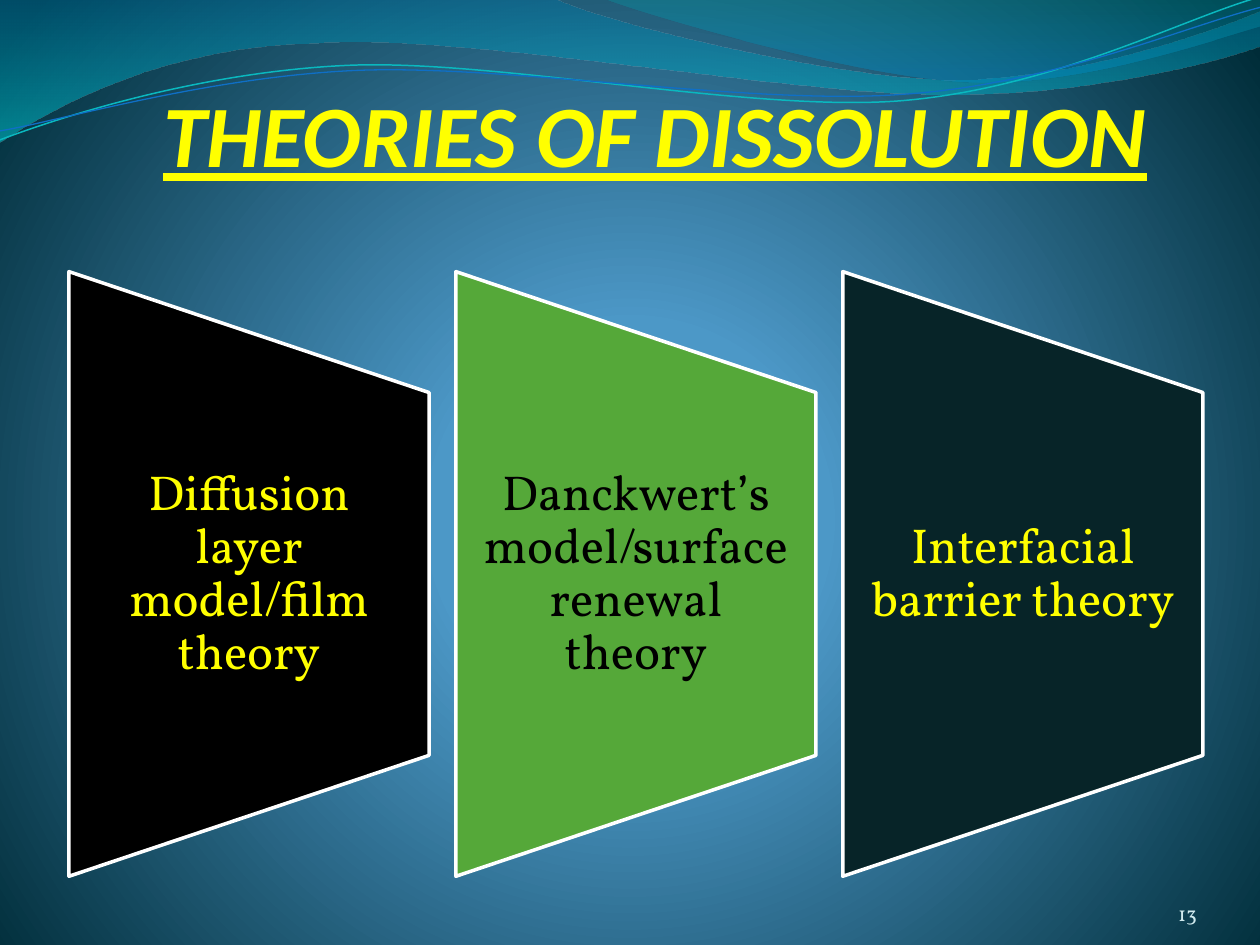
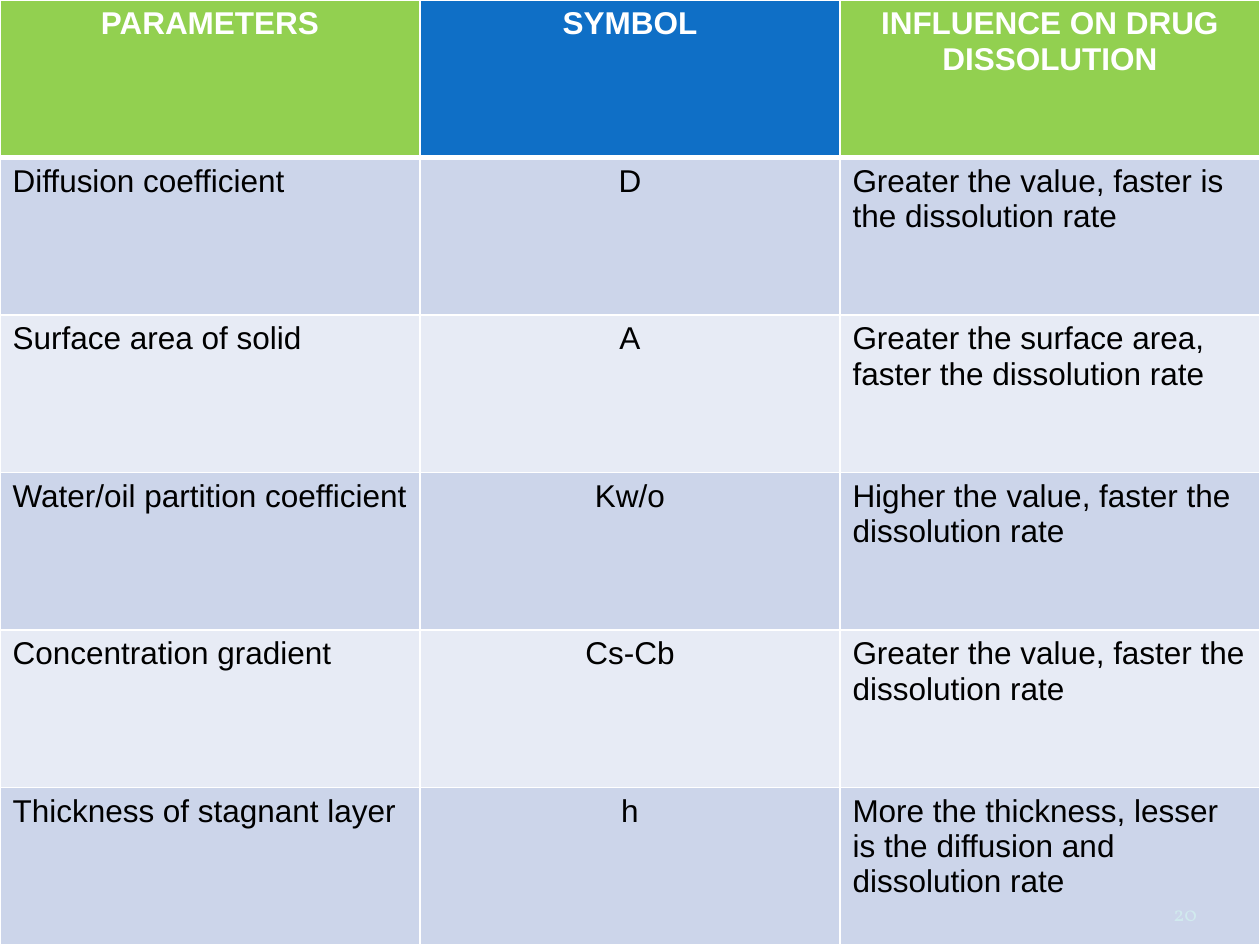
import pptx
import pptx.dml.color
import pptx.enum.shapes
import pptx.enum.text
import pptx.oxml
import pptx.oxml.ns
import pptx.util

Cm, Pt = pptx.util.Cm, pptx.util.Pt
RGBColor = pptx.dml.color.RGBColor
PP_ALIGN = pptx.enum.text.PP_ALIGN
MSO_ANCHOR = pptx.enum.text.MSO_ANCHOR

# Colours
YELLOW = RGBColor(0xFF, 0xFF, 0x00)
BLACK = RGBColor(0x00, 0x00, 0x00)
WHITE = RGBColor(0xFF, 0xFF, 0xFF)
GREEN = RGBColor(0x55, 0xA8, 0x39)
DARK_TEAL = RGBColor(0x07, 0x24, 0x28)
PALE_BLUE = RGBColor(0xD1, 0xEA, 0xEE)
LIME = RGBColor(0x92, 0xD0, 0x50)
BLUE = RGBColor(0x0F, 0x6F, 0xC6)
TURQUOISE = RGBColor(0x0A, 0xB8, 0xBF)
ROW_BANDS = (RGBColor(0xCC, 0xD5, 0xEA), RGBColor(0xE7, 0xEB, 0xF5))
SKY = RGBColor(0x4A, 0xA0, 0xD6)
MID_BLUE = RGBColor(0x4C, 0x98, 0xC7)
DEEP_TEAL = RGBColor(0x00, 0x2C, 0x38)
WAVE_BLUE = RGBColor(0x00, 0x74, 0xA1)
WAVE_CYAN = RGBColor(0x00, 0xC6, 0xCF)
WAVE_TEAL = RGBColor(0x00, 0xA1, 0xA9)
WAVE_AZURE = RGBColor(0x00, 0x8B, 0xBF)

# Content
TITLE = "THEORIES OF DISSOLUTION"
THEORIES = [
    ("Diffusion layer model/film theory", BLACK, YELLOW),
    ("Danckwert’s model/surface renewal theory", GREEN, BLACK),
    ("Interfacial barrier theory", DARK_TEAL, YELLOW),
]
HEADERS = [("PARAMETERS", LIME), ("SYMBOL", BLUE),
           ("INFLUENCE ON DRUG DISSOLUTION", LIME)]
PARAMETERS = [
    ("Diffusion coefficient", "D", "Greater the value, faster is the dissolution rate"),
    ("Surface area of solid", "A", "Greater the surface area, faster the dissolution rate"),
    ("Water/oil partition coefficient", "Kw/o", "Higher the value, faster the dissolution rate"),
    ("Concentration gradient", "Cs-Cb", "Greater the value, faster the dissolution rate"),
    ("Thickness of stagnant layer", "h",
     "More the thickness, lesser is the diffusion and dissolution rate"),
]

# Sizes and formats
SLIDE_WIDTH, SLIDE_HEIGHT = Cm(25.4), Cm(19.05)
TITLE_FORMAT = {"name": "Calibri", "size": Pt(50), "bold": True, "italic": True, "underline": True}
THEORY_FORMAT = {"name": "Vollkorn", "size": Pt(28)}
NUMBER_FORMAT = {"name": "Vollkorn", "size": Pt(12)}
TABLE_FORMAT = {"name": "Arial", "size": Pt(18)}

# Gradients: stops are (position %, colour, opacity %)
BACKGROUND_STOPS = [(0, SKY, 100), (25, MID_BLUE, 100), (100, DEEP_TEAL, 100)]
CIRCULAR = ('<a:path path="circle"><a:fillToRect l="10000" t="110000" '
            'r="10000" b="100000"/></a:path>')
DOWNWARD = '<a:lin ang="5400000" scaled="1"/>'

# Outlines in cm: two numbers are a straight step, six a Bézier curve
WAVES = [
    ([(0, 0), (11.18, -0.03), (12.09, 0.43, 16.87, 1.6, 19.25, 1.6),
      (21.67, 1.6, 24.33, 0.66, 25.4, 0.23), (25.43, 0.91),
      (24.97, 1.12, 22.1, 1.93, 18.95, 1.9), (15.8, 1.9, 9.7, 0.71, 6.53, 0.86),
      (3.28, 0.91, 1.17, 2.11, -0.03, 2.87)],
     [(0, WAVE_BLUE, 45), (100, WAVE_CYAN, 55)]),
    ([(12.17, -0.03), (12.93, 0.28, 17.32, 1.57, 19.53, 1.65),
      (21.74, 1.75, 24.41, 0.81, 25.4, 0.53), (25.4, 0)],
     [(0, WAVE_TEAL, 30), (80, WAVE_AZURE, 45)]),
]
WAVE_LINE_TILT = 357.3
WAVE_LINES = [
    ([(-0.05, 2.22), (1.19, 1.82, 4.02, 1.04, 7.05, 1.05),
      (10.05, 1.07, 15.02, 2.37, 18.08, 2.29),
      (21.13, 2.2, 23.87, 0.91, 25.41, 0.55)], TURQUOISE, 0.85),
    ([(-0.04, 2.04), (1.16, 1.9, 4.18, 1.15, 7.2, 1.16),
      (10.25, 1.18, 15.13, 2.25, 18.19, 2.16),
      (21.21, 2.1, 23.93, 1.06, 25.45, 0.75)], BLUE, 0.75),
]


def set_gradient(fill, element, stops, direction):
    fill.gradient()
    gradient = element.xpath(".//a:gradFill")[0]
    stop_xml = "".join(
        f'<a:gs pos="{position * 1000}"><a:srgbClr val="{color}">'
        f'<a:alpha val="{opacity * 1000}"/></a:srgbClr></a:gs>'
        for position, color, opacity in stops)
    gradient.getparent().replace(gradient, pptx.oxml.parse_xml(
        f'<a:gradFill {pptx.oxml.ns.nsdecls("a")} rotWithShape="1">'
        f'<a:gsLst>{stop_xml}</a:gsLst>{direction}</a:gradFill>'))


def add_outline(slide, outline, close):
    points = [(Cm(step[index]), Cm(step[index + 1]))
              for step in outline for index in range(0, len(step), 2)]
    builder = slide.shapes.build_freeform(*points[0])
    builder.add_line_segments(points[1:], close=close)
    shape = builder.convert_to_shape()
    shape.shadow.inherit = False
    # Join each three control points into one curve
    segments = iter(shape.element.xpath(".//a:path/a:lnTo"))
    for step in outline[1:]:
        parts = [next(segments) for _ in range(len(step) // 2)]
        if len(parts) == 3:
            curve = pptx.oxml.parse_xml(f'<a:cubicBezTo {pptx.oxml.ns.nsdecls("a")}/>')
            parts[0].addprevious(curve)
            for part in parts:
                curve.append(part[0])
                part.getparent().remove(part)
    return shape


def write_text(frame, text, font_format, color, alignment):
    paragraph = frame.paragraphs[0]
    paragraph.alignment = alignment
    run = paragraph.add_run()
    run.text = text
    for name, value in font_format.items():
        setattr(run.font, name, value)
    run.font.color.rgb = color
    return paragraph


def add_text(shapes, place, text, font_format, color, alignment, anchor, side_margin=0):
    frame = shapes.add_textbox(*place).text_frame
    frame_format = {"word_wrap": True, "vertical_anchor": anchor,
                    "margin_left": side_margin, "margin_right": side_margin,
                    "margin_top": 0, "margin_bottom": 0}
    for name, value in frame_format.items():
        setattr(frame, name, value)
    return write_text(frame, text, font_format, color, alignment)


def add_waves(slide):
    """Draw the waves, then hand them to the layout that all slides share."""
    waves = []
    for outline, stops in WAVES:
        wave = add_outline(slide, outline, True)
        set_gradient(wave.fill, wave.element, stops, DOWNWARD)
        wave.line.fill.background()
        waves.append(wave)
    wave_lines = []
    for outline, color, width in WAVE_LINES:
        wave_line = add_outline(slide, outline, False)
        wave_line.rotation = WAVE_LINE_TILT
        wave_line.fill.background()
        wave_line.line.color.rgb = color
        wave_line.line.width = Pt(width)
        wave_lines.append(wave_line)
    waves.append(slide.shapes.add_group_shape(wave_lines))
    for wave in waves:
        slide.slide_layout.shapes.element.append(wave.element)


def add_slide_number(slide, number):
    add_text(slide.shapes, (Cm(22.02), Cm(17.65), Cm(2.11), Cm(1.02)), number,
             NUMBER_FORMAT, PALE_BLUE, PP_ALIGN.RIGHT, MSO_ANCHOR.BOTTOM)


def add_theories(slide):
    # Each panel is a trapezoid turned on its side, so width and height swap
    panel_width, panel_height = Cm(7.26), Cm(12.19)
    first_left, pitch, middle = Cm(1.39), Cm(7.8), Cm(11.57)
    label_height = Cm(7.32)
    shapes = slide.shapes.add_group_shape().shapes
    for index, (text, fill_color, text_color) in enumerate(THEORIES):
        left = first_left + index * pitch
        panel = shapes.add_shape(
            pptx.enum.shapes.MSO_SHAPE.FLOWCHART_MANUAL_OPERATION,
            left + (panel_width - panel_height) // 2, middle - panel_width // 2,
            panel_height, panel_width)
        panel.rotation = 270
        panel.shadow.inherit = False
        panel.fill.solid()
        panel.fill.fore_color.rgb = fill_color
        panel.line.color.rgb = WHITE
        panel.line.width = Pt(2)
        paragraph = add_text(
            shapes, (left, middle - label_height // 2, panel_width, label_height), text,
            THEORY_FORMAT, text_color, PP_ALIGN.CENTER, MSO_ANCHOR.MIDDLE, Cm(0.48))
        paragraph.line_spacing = 0.9


def set_borders(cell, widths):
    properties = cell._tc.get_or_add_tcPr()
    for index, (side, width) in enumerate(widths.items()):
        properties.insert(index, pptx.oxml.parse_xml(
            f'<a:ln{side} {pptx.oxml.ns.nsdecls("a")} w="{Pt(width)}"><a:solidFill>'
            f'<a:srgbClr val="{WHITE}"/></a:solidFill></a:ln{side}>'))


def add_parameter_table(slide):
    rows = [[text for text, _ in HEADERS], *PARAMETERS]
    table = slide.shapes.add_table(len(rows), len(HEADERS), 0, 0,
                                   SLIDE_WIDTH, SLIDE_HEIGHT).table
    table.horz_banding = False
    for row_index, texts in enumerate(rows):
        is_header = row_index == 0
        for column_index, text in enumerate(texts):
            cell = table.cell(row_index, column_index)
            cell.fill.solid()
            cell.fill.fore_color.rgb = (HEADERS[column_index][1] if is_header
                                        else ROW_BANDS[(row_index - 1) % 2])
            centred = is_header or column_index == 1
            write_text(cell.text_frame, text, {**TABLE_FORMAT, "bold": is_header},
                       WHITE if is_header else BLACK,
                       PP_ALIGN.CENTER if centred else PP_ALIGN.LEFT)
            set_borders(cell, {"L": 1, "R": 1, "T": 3 if row_index == 1 else 1,
                               "B": 3 if is_header else 1})


def main():
    presentation = pptx.Presentation()
    presentation.slide_width, presentation.slide_height = SLIDE_WIDTH, SLIDE_HEIGHT
    master = presentation.slide_master
    set_gradient(master.background.fill, master.element, BACKGROUND_STOPS, CIRCULAR)
    blank_layout = presentation.slide_layouts[6]

    # Theories
    slide = presentation.slides.add_slide(blank_layout)
    add_waves(slide)
    add_text(slide.shapes, (Cm(1.78), Cm(1.33), Cm(22.86), Cm(2.41)), TITLE, TITLE_FORMAT,
             YELLOW, PP_ALIGN.CENTER, MSO_ANCHOR.BOTTOM)
    add_theories(slide)
    add_slide_number(slide, "13")

    # Parameters
    slide = presentation.slides.add_slide(blank_layout)
    add_parameter_table(slide)
    add_slide_number(slide, "20")

    presentation.save("out.pptx")


if __name__ == "__main__":
    main()
